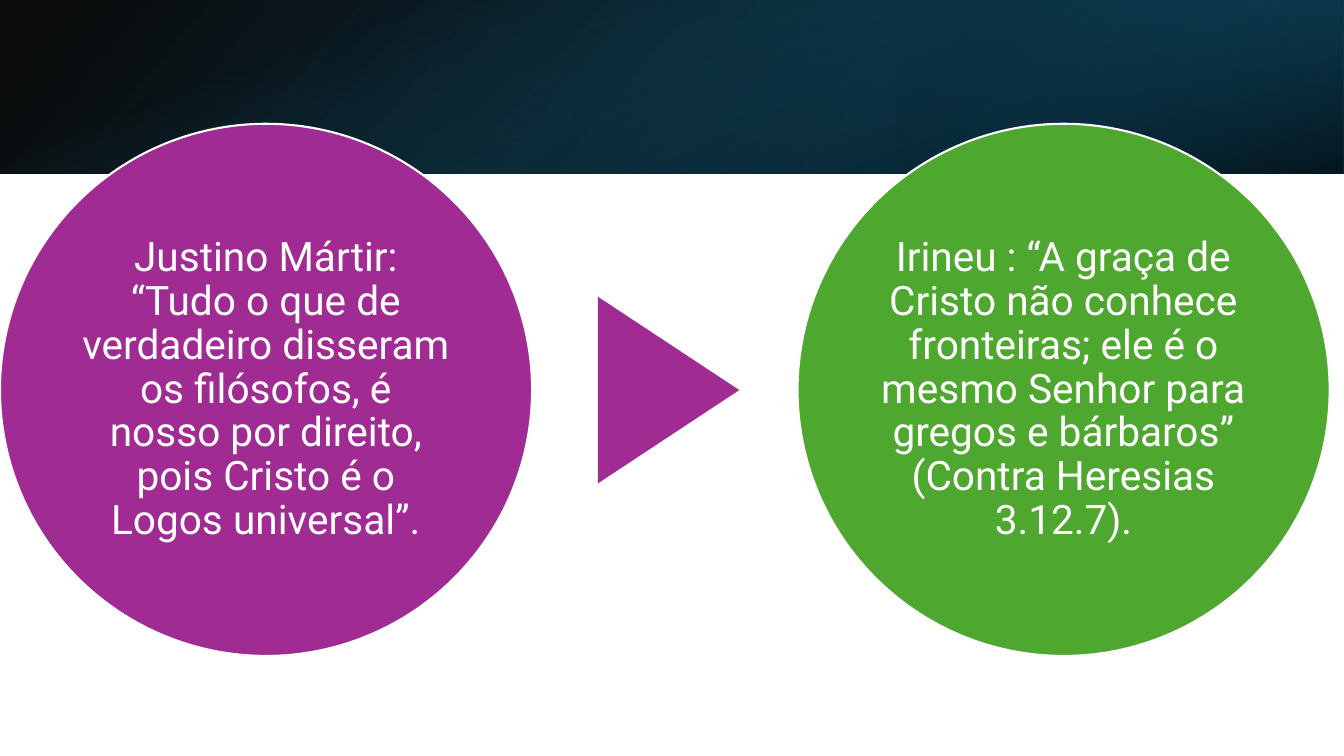
from lxml import etree
from pptx import Presentation
from pptx import util as u
from pptx.dml.color import RGBColor
from pptx.enum import shapes, text
from pptx.oxml.ns import qn

Cm = u.Cm
COLORS = {
    "black": "000000",
    "navy": "104862",
    "deep": "0B3041",
    "teal": "156082",
    "purple": "A02B93",
    "green": "4EA72E",
    "white": "FFFFFF",
}
WIDTH, HEIGHT = 33.87, 19.05
BAND = 4.37
GLOW = 11.28
CIRCLE = 13.41
CIRCLE_TOP = 3.12

presentation = Presentation()
presentation.slide_width, presentation.slide_height = Cm(WIDTH), Cm(HEIGHT)
slide = presentation.slides.add_slide(presentation.slide_layouts[6])


def add_shape(kind, left, top, width, height, rotation=0):
    """Add a preset shape, lengths in cm, without shadow or outline."""
    shape = slide.shapes.add_shape(kind, Cm(left), Cm(top), Cm(width), Cm(height))
    shape.shadow.inherit = False
    shape.line.fill.background()
    shape.rotation = rotation
    return shape


# Header band: left, top, width, height, rotation, flipped, clockwise angle,
# then gradient stops as position, colour, opacity in percent
turned = (WIDTH - BAND) / 2
bands = [
    (0, 0, WIDTH, BAND, 0, True, 140,
     [(0, "black", 96), (100, "navy", 100)]),
    (WIDTH - GLOW, 0, GLOW, BAND, 180, True, 320,
     [(19, "deep", 68), (100, "teal", 79)]),
    (turned, -turned, BAND, WIDTH, 90, False, 340,
     [(23, "teal", 0), (99, "black", 74)]),
]
for left, top, width, height, rotation, flipped, angle, stops in bands:
    band = add_shape(shapes.MSO_SHAPE.RECTANGLE, left, top, width, height, rotation)
    if flipped:
        band.element.spPr.xfrm.set("flipH", "1")
    band.fill.gradient()
    band.fill.gradient_angle = 360 - angle
    for stop, (position, color, opacity) in zip(band.fill.gradient_stops, stops):
        stop.position = position / 100
        stop.color.rgb = RGBColor.from_string(COLORS[color])
    for rgb, (_, _, opacity) in zip(band.element.spPr.iter(qn("a:srgbClr")), stops):
        etree.SubElement(rgb, qn("a:alpha"), val=str(opacity * 1000))

# Quotations in circles
quotes = [
    (0, "purple", "Justino Mártir: “Tudo o que de verdadeiro disseram os filósofos, "
     "é nosso por direito, pois Cristo é o Logos universal”."),
    (20.1, "green", "Irineu : “A graça de Cristo não conhece fronteiras; ele é o mesmo "
     "Senhor para gregos e bárbaros” (Contra Heresias 3.12.7)."),
]
for left, color, quote in quotes:
    circle = add_shape(shapes.MSO_SHAPE.OVAL, left, CIRCLE_TOP, CIRCLE, CIRCLE)
    circle.fill.solid()
    circle.fill.fore_color.rgb = RGBColor.from_string(COLORS[color])
    circle.line.color.rgb = RGBColor.from_string(COLORS["white"])
    circle.line.width = u.Pt(1.5)
    frame = circle.text_frame
    frame.word_wrap = True
    frame.vertical_anchor = text.MSO_ANCHOR.MIDDLE
    frame.margin_left = frame.margin_right = Cm(0.1)
    frame.margin_top = frame.margin_bottom = Cm(0.1)
    paragraph = frame.paragraphs[0]
    paragraph.alignment = text.PP_ALIGN.CENTER
    paragraph.line_spacing = 0.9
    run = paragraph.add_run()
    run.text = quote
    run.font.name = "Roboto"
    run.font.size = u.Pt(29)
    run.font.color.rgb = RGBColor.from_string(COLORS["white"])

# Pointer from the first quotation to the second
pointer = add_shape(shapes.MSO_SHAPE.ISOSCELES_TRIANGLE, 14.5, 8.05, 4.7, 3.56, 90)
pointer.fill.solid()
pointer.fill.fore_color.rgb = RGBColor.from_string(COLORS["purple"])

presentation.save("out.pptx")
